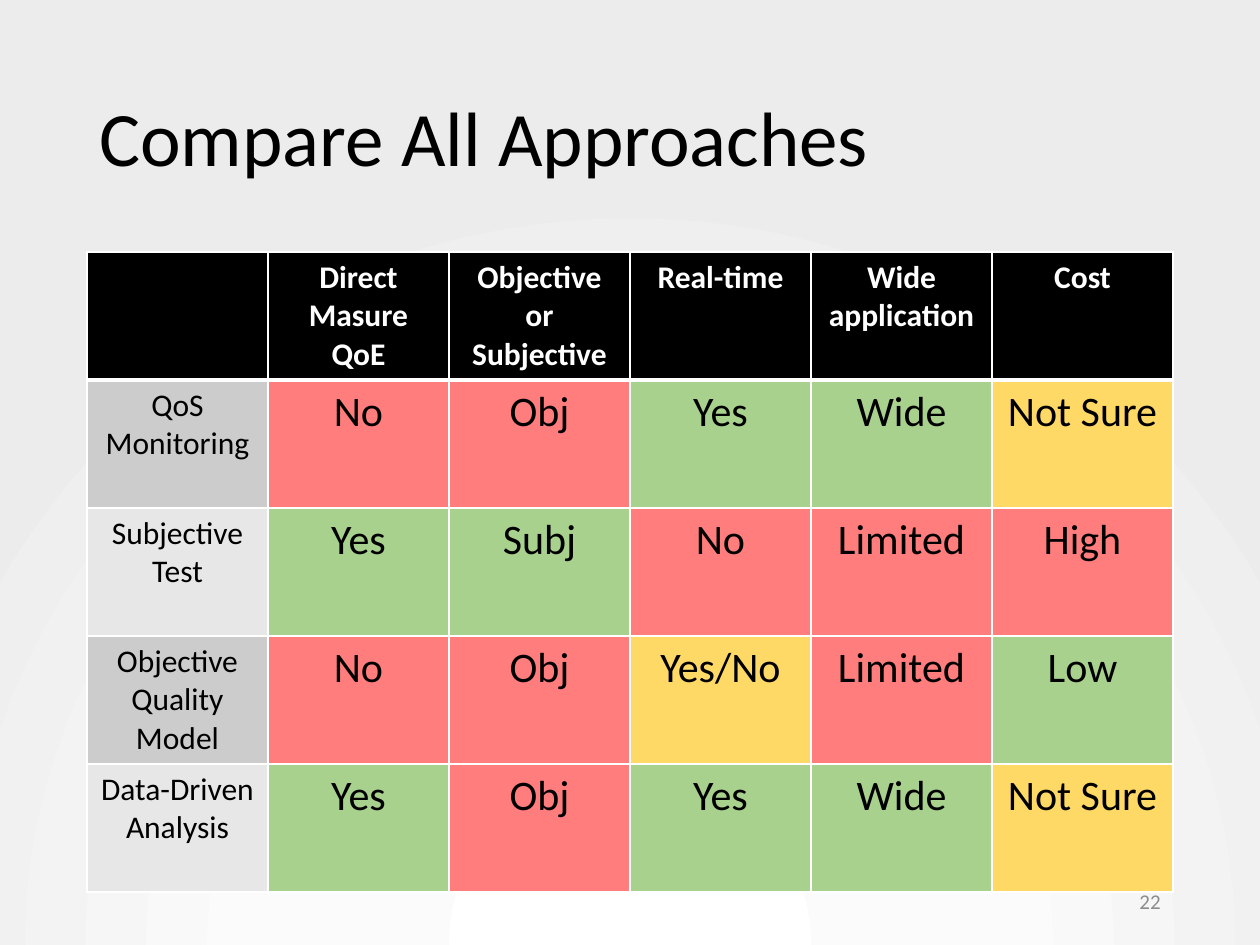
from lxml import etree
from pptx import Presentation
from pptx.dml.color import RGBColor
from pptx.enum.text import MSO_ANCHOR, PP_ALIGN
from pptx.oxml.ns import qn
from pptx.util import Inches, Pt

LEFT, CENTER, RIGHT = PP_ALIGN.LEFT, PP_ALIGN.CENTER, PP_ALIGN.RIGHT
MIDDLE = MSO_ANCHOR.MIDDLE

FONT = "Calibri"
COLORS = {
    "black": "000000", "white": "FFFFFF", "page_number": "8C8C8C",
    "band_dark": "CCCCCC", "band_light": "E7E7E7",
    "good": "A9D18E", "bad": "FF7D7D", "unsure": "FFD966",
}
BACKGROUND_STOPS = [(0, "FFFFFF"), (46, "FBFBFB"), (100, "ECECEC")]
BACKGROUND_CENTER = {"l": 50, "t": 130, "r": 50, "b": -30}

HEADINGS = ["", "Direct Masure QoE", "Objective or Subjective", "Real-time",
            "Wide application", "Cost"]
APPROACHES = [
    ("QoS Monitoring", [("No", "bad"), ("Obj", "bad"), ("Yes", "good"),
                        ("Wide", "good"), ("Not Sure", "unsure")]),
    ("Subjective Test", [("Yes", "good"), ("Subj", "good"), ("No", "bad"),
                         ("Limited", "bad"), ("High", "bad")]),
    ("Objective Quality Model", [("No", "bad"), ("Obj", "bad"), ("Yes/No", "unsure"),
                                 ("Limited", "bad"), ("Low", "good")]),
    ("Data-Driven Analysis", [("Yes", "good"), ("Obj", "bad"), ("Yes", "good"),
                              ("Wide", "good"), ("Not Sure", "unsure")]),
]


def rgb(name):
    return RGBColor.from_string(COLORS[name])


def write(frame, text, size, color, align, bold=False):
    para = frame.paragraphs[0]
    para.alignment = align
    span = para.add_run()
    span.text = text
    span.font.name = FONT
    span.font.size = Pt(size)
    span.font.bold = bold
    span.font.color.rgb = rgb(color)
    return para


def add_text(page, box, text, size, color, align):
    frame = page.shapes.add_textbox(*map(Inches, box)).text_frame
    frame.word_wrap = True
    frame.vertical_anchor = MIDDLE
    return write(frame, text, size, color, align)


def paint_background(page):
    page.background.fill.gradient()
    gradient = page.element.find(".//" + qn("a:gradFill"))
    for child in list(gradient):
        gradient.remove(child)
    stops = etree.SubElement(gradient, qn("a:gsLst"))
    for position, color in BACKGROUND_STOPS:
        stop = etree.SubElement(stops, qn("a:gs"), pos=str(position * 1000))
        etree.SubElement(stop, qn("a:srgbClr"), val=color)
    circle = etree.SubElement(gradient, qn("a:path"), path="circle")
    etree.SubElement(circle, qn("a:fillToRect"),
                     {side: str(value * 1000) for side, value in BACKGROUND_CENTER.items()})


def set_borders(cell, widths):
    """Draw white borders; widths are points for left, right, top, bottom."""
    properties = cell._tc.get_or_add_tcPr()
    for index, (side, width) in enumerate(zip("LRTB", widths)):
        line = etree.Element(qn("a:ln" + side), w=str(Pt(width)))
        fill = etree.SubElement(line, qn("a:solidFill"))
        etree.SubElement(fill, qn("a:srgbClr"), val=COLORS["white"])
        properties.insert(index, line)


def fill_cell(cell, text, fill, size, color="black", bold=False, top=1, bottom=1):
    cell.fill.solid()
    cell.fill.fore_color.rgb = rgb(fill)
    set_borders(cell, (1, 1, top, bottom))
    if text:
        write(cell.text_frame, text, size, color, CENTER, bold)


def add_comparison(page, box):
    left, top, width, height = map(Inches, box)
    table = page.shapes.add_table(len(APPROACHES) + 1, len(HEADINGS),
                                  left, top, width, height).table
    table.first_row = table.horz_banding = False

    # Heading row
    for column, heading in enumerate(HEADINGS):
        fill_cell(table.cell(0, column), heading, "black", 18, "white", bold=True, bottom=3)

    # One row per approach, each rating coloured by verdict
    for row, (approach, ratings) in enumerate(APPROACHES, 1):
        upper = 3 if row == 1 else 1
        band = "band_dark" if row % 2 else "band_light"
        fill_cell(table.cell(row, 0), approach, band, 18, top=upper)
        for column, (rating, verdict) in enumerate(ratings, 1):
            fill_cell(table.cell(row, column), rating, verdict, 24, top=upper)


def main():
    deck = Presentation()
    deck.slide_width, deck.slide_height = Inches(10), Inches(7.5)
    page = deck.slides.add_slide(deck.slide_layouts[6])
    paint_background(page)

    title = add_text(page, (0.69, 0.4, 8.62, 1.45), "Compare All Approaches", 44, "black", LEFT)
    title.line_spacing = 0.9
    add_comparison(page, (0.69, 2, 8.62, 5.08))
    add_text(page, (7.06, 6.95, 2.25, 0.4), "22", 12, "page_number", RIGHT)
    deck.save("out.pptx")


if __name__ == "__main__":
    main()
